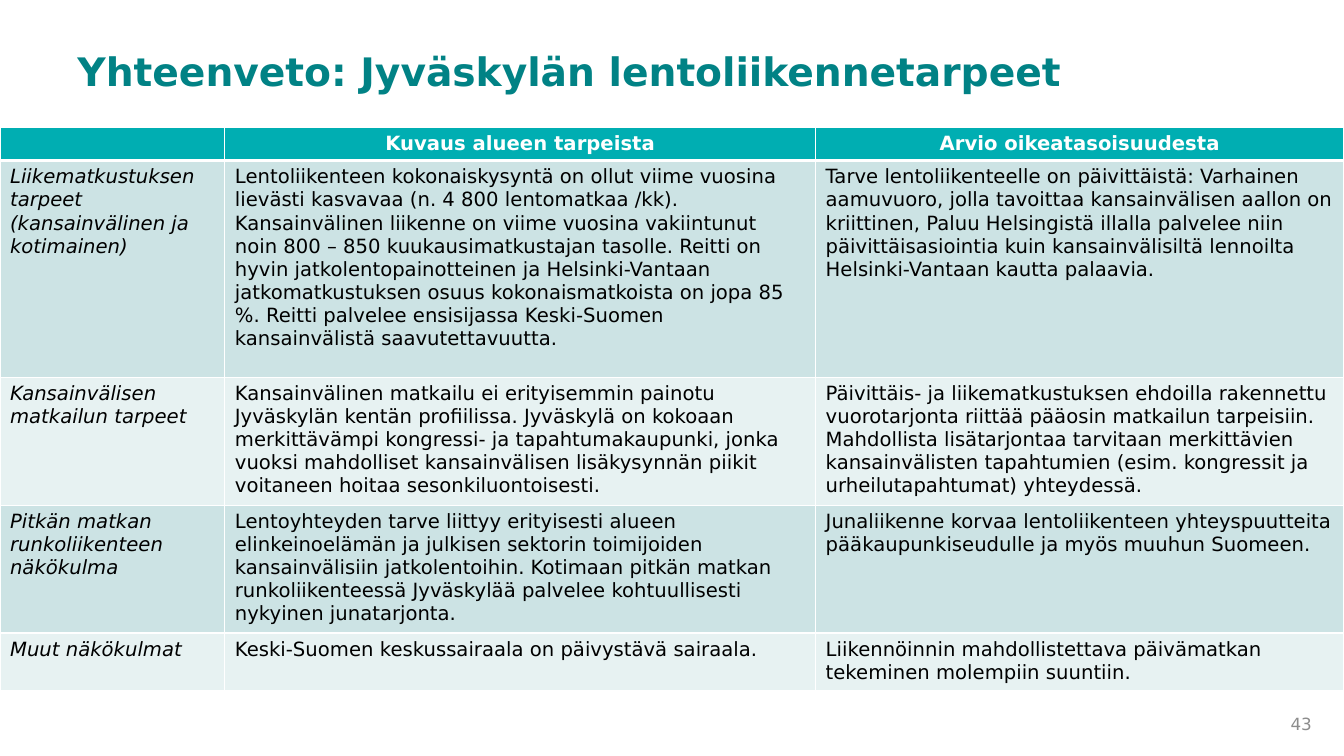
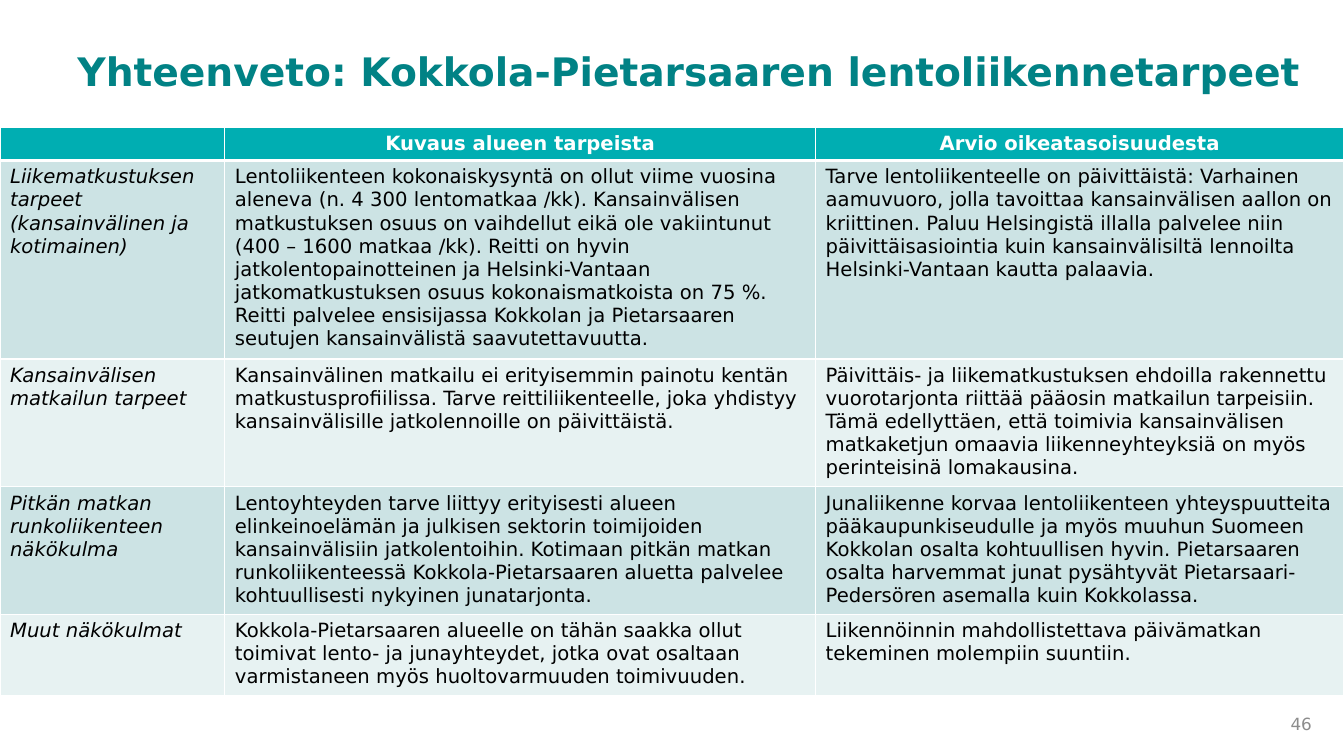
from lxml import etree
from pptx import Presentation
from pptx.dml.color import RGBColor
from pptx.enum import text
from pptx.oxml.ns import qn
from pptx.util import Inches, Pt

TEAL = RGBColor(0x01, 0x82, 0x85)
HEAD = RGBColor(0x00, 0xAE, 0xB2)
DARK = RGBColor(0xCC, 0xE3, 0xE4)
PALE = RGBColor(0xE7, 0xF2, 0xF2)
GREY = RGBColor(0x8C, 0x8C, 0x8C)
WHITE = RGBColor(0xFF, 0xFF, 0xFF)
BLACK = RGBColor(0x00, 0x00, 0x00)

LEFT, MID, RIGHT = text.PP_ALIGN.LEFT, text.PP_ALIGN.CENTER, text.PP_ALIGN.RIGHT
TOP, MIDDLE = text.MSO_ANCHOR.TOP, text.MSO_ANCHOR.MIDDLE

TITLE = {"size": Pt(28), "bold": True, "color": TEAL}
PAGE = {"size": Pt(12), "bold": False, "color": GREY}
HEADER = {"size": Pt(14), "bold": True, "color": WHITE}
LABEL = {"size": Pt(14), "bold": False, "italic": True, "color": BLACK}
BODY = {"size": Pt(14), "bold": False, "italic": False, "color": BLACK}

COLS = [2.23, 5.86, 5.24]
HEADS = ["", "Kuvaus alueen tarpeista", "Arvio oikeatasoisuudesta"]
LABELS = [
    "Liikematkustuksen tarpeet (kansainvälinen ja kotimainen)",
    "Kansainvälisen matkailun tarpeet",
    "Pitkän matkan runkoliikenteen näkökulma",
    "Muut näkökulmat",
]
BOTH_WAYS = "Liikennöinnin mahdollistettava päivämatkan tekeminen molempiin suuntiin."

SLIDES = [
    {
        "title": "Yhteenveto: Jyväskylän lentoliikennetarpeet",
        "width": 11.75,
        "page": "43",
        "rows": [0.33, 2.15, 1.24, 1.24, 0.56],
        "needs": [
            "Lentoliikenteen kokonaiskysyntä on ollut viime vuosina lievästi kasvavaa "
            "(n. 4 800 lentomatkaa /kk). Kansainvälinen liikenne on viime vuosina "
            "vakiintunut noin 800 – 850 kuukausimatkustajan tasolle. Reitti on hyvin "
            "jatkolentopainotteinen ja Helsinki-Vantaan jatkomatkustuksen osuus "
            "kokonaismatkoista on jopa 85 %. Reitti palvelee ensisijassa Keski-Suomen "
            "kansainvälistä saavutettavuutta.",
            "Kansainvälinen matkailu ei erityisemmin painotu Jyväskylän kentän "
            "profiilissa. Jyväskylä on kokoaan merkittävämpi kongressi- ja "
            "tapahtumakaupunki, jonka vuoksi mahdolliset kansainvälisen lisäkysynnän "
            "piikit voitaneen hoitaa sesonkiluontoisesti.",
            "Lentoyhteyden tarve liittyy erityisesti alueen elinkeinoelämän ja julkisen "
            "sektorin toimijoiden kansainvälisiin jatkolentoihin. Kotimaan pitkän matkan "
            "runkoliikenteessä Jyväskylää palvelee kohtuullisesti nykyinen junatarjonta.",
            "Keski-Suomen keskussairaala on päivystävä sairaala.",
        ],
        "views": [
            "Tarve lentoliikenteelle on päivittäistä: Varhainen aamuvuoro, jolla tavoittaa "
            "kansainvälisen aallon on kriittinen, Paluu Helsingistä illalla palvelee niin "
            "päivittäisasiointia kuin kansainvälisiltä lennoilta Helsinki-Vantaan kautta "
            "palaavia.",
            "Päivittäis- ja liikematkustuksen ehdoilla rakennettu vuorotarjonta riittää "
            "pääosin matkailun tarpeisiin. Mahdollista lisätarjontaa tarvitaan "
            "merkittävien kansainvälisten tapahtumien (esim. kongressit ja "
            "urheilutapahtumat) yhteydessä.",
            "Junaliikenne korvaa lentoliikenteen yhteyspuutteita pääkaupunkiseudulle ja "
            "myös muuhun Suomeen.",
            BOTH_WAYS,
        ],
    },
    {
        "title": "Yhteenveto: Kokkola-Pietarsaaren lentoliikennetarpeet",
        "width": 12.44,
        "page": "46",
        "rows": [0.33, 1.92, 1.24, 1.24, 0.79],
        "needs": [
            "Lentoliikenteen kokonaiskysyntä on ollut viime vuosina aleneva (n. 4 300 "
            "lentomatkaa /kk). Kansainvälisen matkustuksen osuus on vaihdellut eikä ole "
            "vakiintunut (400 – 1600 matkaa /kk). Reitti on hyvin jatkolentopainotteinen "
            "ja Helsinki-Vantaan jatkomatkustuksen osuus kokonaismatkoista on 75 %. "
            "Reitti palvelee ensisijassa Kokkolan ja Pietarsaaren seutujen "
            "kansainvälistä saavutettavuutta.",
            "Kansainvälinen matkailu ei erityisemmin painotu kentän "
            "matkustusprofiilissa. Tarve reittiliikenteelle, joka yhdistyy "
            "kansainvälisille jatkolennoille on päivittäistä.",
            "Lentoyhteyden tarve liittyy erityisesti alueen elinkeinoelämän ja julkisen "
            "sektorin toimijoiden kansainvälisiin jatkolentoihin. Kotimaan pitkän matkan "
            "runkoliikenteessä Kokkola-Pietarsaaren aluetta palvelee kohtuullisesti "
            "nykyinen junatarjonta.",
            "Kokkola-Pietarsaaren alueelle on tähän saakka ollut toimivat lento- ja "
            "junayhteydet, jotka ovat osaltaan varmistaneen myös huoltovarmuuden "
            "toimivuuden.",
        ],
        "views": [
            "Tarve lentoliikenteelle on päivittäistä: Varhainen aamuvuoro, jolla tavoittaa "
            "kansainvälisen aallon on kriittinen. Paluu Helsingistä illalla palvelee niin "
            "päivittäisasiointia kuin kansainvälisiltä lennoilta Helsinki-Vantaan kautta "
            "palaavia.",
            "Päivittäis- ja liikematkustuksen ehdoilla rakennettu vuorotarjonta riittää "
            "pääosin matkailun tarpeisiin. Tämä edellyttäen, että toimivia "
            "kansainvälisen matkaketjun omaavia liikenneyhteyksiä on myös perinteisinä "
            "lomakausina.",
            "Junaliikenne korvaa lentoliikenteen yhteyspuutteita pääkaupunkiseudulle ja "
            "myös muuhun Suomeen Kokkolan osalta kohtuullisen hyvin. Pietarsaaren osalta "
            "harvemmat junat pysähtyvät Pietarsaari-Pedersören asemalla kuin Kokkolassa.",
            BOTH_WAYS,
        ],
    },
]


def write(frame, words, style, align=LEFT):
    """Put one formatted paragraph in a frame; an empty one keeps its text size."""
    para = frame.paragraphs[0]
    para.alignment = align
    if not words:
        size = str(int(style["size"].pt * 100))
        etree.SubElement(para._p, qn("a:endParaRPr"), sz=size)
        return para
    run = para.add_run()
    run.text = words
    run.font.name = "DejaVu Sans"
    for key, value in style.items():
        if key == "color":
            run.font.color.rgb = value
        else:
            setattr(run.font, key, value)
    return para


def edge(cell, side, width):
    """Draw a white border on one side (L, R, T or B) of a cell."""
    line = etree.SubElement(cell._tc.get_or_add_tcPr(), qn("a:ln" + side), w=str(Pt(width)))
    fill = etree.SubElement(line, qn("a:solidFill"))
    etree.SubElement(fill, qn("a:srgbClr"), val=str(WHITE))


deck = Presentation()
deck.slide_width, deck.slide_height = Inches(13.33), Inches(7.5)

for data in SLIDES:
    slide = deck.slides.add_slide(deck.slide_layouts[6])

    for words, at, style, align, anchor, gap in [
        (data["title"], (0.67, 0.47, data["width"], 1.21), TITLE, LEFT, TOP, 0.9),
        (data["page"], (12.36, 7.04, 0.75, 0.28), PAGE, RIGHT, MIDDLE, 1.0),
    ]:
        frame = slide.shapes.add_textbox(*map(Inches, at)).text_frame
        frame.word_wrap = True
        frame.vertical_anchor = anchor
        write(frame, words, style, align).line_spacing = gap

    rows = [HEADS, *zip(LABELS, data["needs"], data["views"])]
    size = (sum(COLS), sum(data["rows"]))
    table = slide.shapes.add_table(
        len(rows), len(COLS), Inches(0), Inches(1.26), *map(Inches, size)
    ).table
    for col, width in zip(table.columns, COLS):
        col.width = Inches(width)
    for row, height in zip(table.rows, data["rows"]):
        row.height = Inches(height)

    for r, row in enumerate(rows):
        for c, words in enumerate(row):
            cell = table.cell(r, c)
            for side in "LRTB":
                thick = (r, side) in [(0, "B"), (1, "T")]
                edge(cell, side, 3 if thick else 1)
            cell.fill.solid()
            cell.fill.fore_color.rgb = HEAD if r == 0 else DARK if r % 2 else PALE
            if r == 0:
                write(cell.text_frame, words, HEADER, MID)
            else:
                write(cell.text_frame, words, BODY if c else LABEL)

deck.save("out.pptx")
